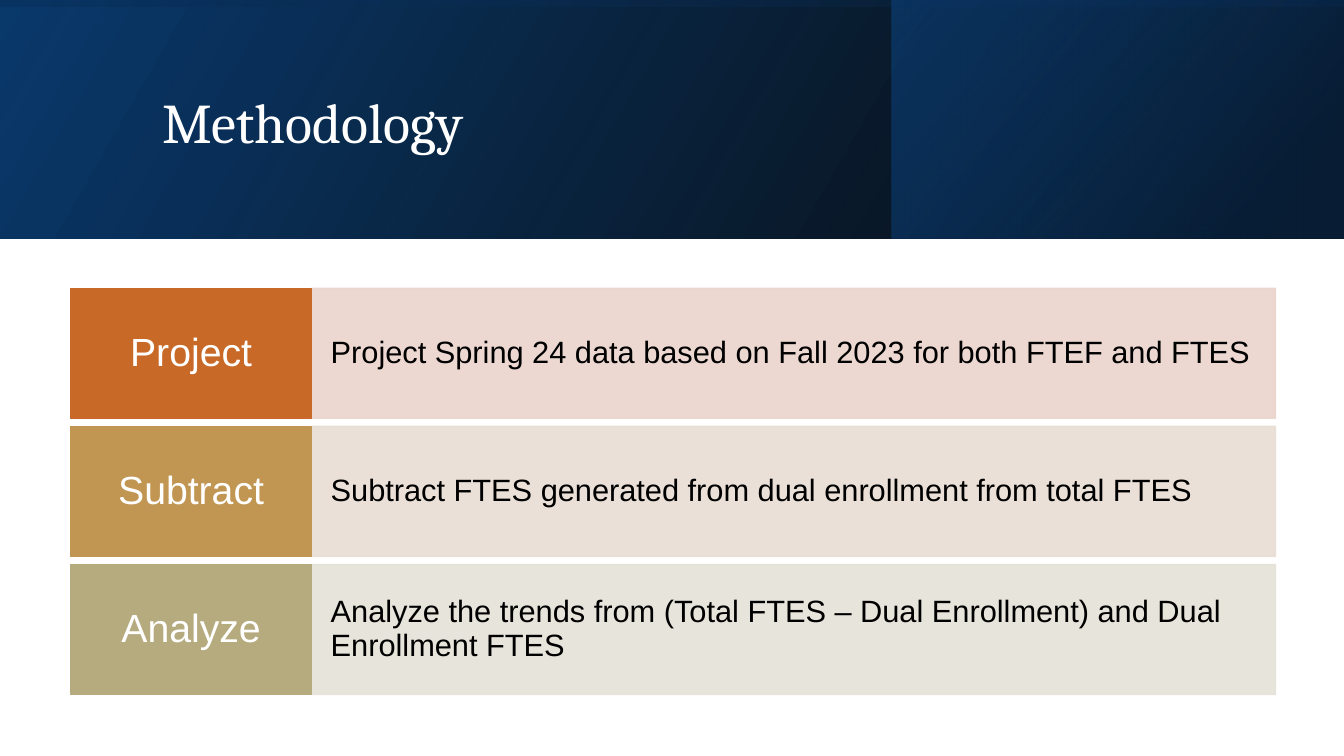
from lxml import etree
from pptx import Presentation
from pptx.dml.color import RGBColor
from pptx.enum.shapes import MSO_SHAPE
from pptx.enum.text import MSO_ANCHOR, PP_ALIGN
from pptx.oxml.ns import qn
from pptx.util import Inches, Pt

RECTANGLE = MSO_SHAPE.RECTANGLE
MIDDLE = MSO_ANCHOR.MIDDLE
LEFT, CENTER = PP_ALIGN.LEFT, PP_ALIGN.CENTER

WIDTH, HEIGHT = 13.33, 7.5
BANNER_HEIGHT = 2.37
PANEL_LEFT = 8.84
LABEL_LEFT, LABEL_WIDTH = 0.7, 2.39
DETAIL_LEFT, DETAIL_WIDTH = LABEL_LEFT + LABEL_WIDTH, 9.56
ROW_TOP, ROW_HEIGHT, ROW_PITCH = 2.86, 1.29, 1.37

STEPS = [
    ("Project", "C96928", "EBD4CD",
     "Project Spring 24 data based on Fall 2023 for both FTEF and FTES"),
    ("Subtract", "C19552", "E8DDD3",
     "Subtract FTES generated from dual enrollment from total FTES"),
    ("Analyze", "B6AB7F", "E5E2D8",
     "Analyze the trends from (Total FTES – Dual Enrollment) and Dual Enrollment FTES"),
]


def rgb(value):
    return RGBColor.from_string(value)


def set_opacity(element, percent):
    """Give every RGB colour inside the element the same opacity."""
    for color in element.iter(qn("a:srgbClr")):
        etree.SubElement(color, qn("a:alpha")).set("val", str(percent * 1000))


def add_rectangle(slide, left, top, width, height):
    shape = slide.shapes.add_shape(
        RECTANGLE, Inches(left), Inches(top), Inches(width), Inches(height))
    shape.shadow.inherit = False
    return shape


def add_gradient_layer(slide, box, stops, angle, rotation=0):
    """Add a mirrored gradient; each stop is position, colour, opacity percent."""
    shape = add_rectangle(slide, *box)
    shape.rotation = rotation
    shape.element.spPr.find(qn("a:xfrm")).set("flipH", "1")
    shape.line.fill.background()
    shape.fill.gradient()
    shape.fill.gradient_angle = angle
    elements = shape.element.spPr.iter(qn("a:gs"))
    for stop, element, (position, color, opacity) in zip(
            shape.fill.gradient_stops, elements, stops):
        stop.position = position
        stop.color.rgb = rgb(color)
        set_opacity(element, opacity)


def write_text(shape, text, font_name, size, color, alignment, margin=0.1):
    frame = shape.text_frame
    frame.word_wrap = True
    frame.vertical_anchor = MIDDLE
    frame.margin_left = frame.margin_right = Inches(margin)
    paragraph = frame.paragraphs[0]
    paragraph.text = text
    paragraph.alignment = alignment
    paragraph.line_spacing = 0.9
    paragraph.font.name = font_name
    paragraph.font.size = Pt(size)
    paragraph.font.color.rgb = rgb(color)


def add_block(slide, left, top, width, color, opacity=100):
    shape = add_rectangle(slide, left, top, width, ROW_HEIGHT)
    shape.fill.solid()
    shape.fill.fore_color.rgb = rgb(color)
    shape.line.color.rgb = rgb(color)
    shape.line.width = Pt(1)
    if opacity < 100:
        set_opacity(shape.element.spPr, opacity)
    return shape


def add_banner(slide):
    add_gradient_layer(slide, (0, 0, WIDTH, BANNER_HEIGHT),
                       [(0, "000000", 96), (1, "0A396C", 100)], 30)
    add_gradient_layer(slide, (PANEL_LEFT, 0, WIDTH - PANEL_LEFT, BANNER_HEIGHT),
                       [(0.19, "072648", 68), (1, "0D4C90", 48)], 40)
    # A quarter turn lays this tall rectangle across the banner.
    offset = (WIDTH - BANNER_HEIGHT) / 2
    add_gradient_layer(slide, (offset, -offset, BANNER_HEIGHT, WIDTH),
                       [(0.23, "0A396C", 16), (0.99, "000000", 45)], 10, 270)
    title = slide.shapes.add_textbox(
        Inches(1.51), Inches(0.38), Inches(10.63), Inches(1.72))
    write_text(title, "Methodology", "Cambria", 40, "FFFFFF", LEFT)


def add_step(slide, row, name, label_color, detail_color, detail):
    top = ROW_TOP + row * ROW_PITCH
    detail_block = add_block(
        slide, DETAIL_LEFT, top, DETAIL_WIDTH, detail_color, 90)
    write_text(detail_block, detail, "Arial", 22, "000000", LEFT, 0.19)
    label_block = add_block(slide, LABEL_LEFT, top, LABEL_WIDTH, label_color)
    write_text(label_block, name, "Arial", 28, "FFFFFF", CENTER, 0.13)


def main():
    presentation = Presentation()
    presentation.slide_width = Inches(WIDTH)
    presentation.slide_height = Inches(HEIGHT)
    slide = presentation.slides.add_slide(presentation.slide_layouts[6])
    add_banner(slide)
    for row, step in enumerate(STEPS):
        add_step(slide, row, *step)
    presentation.save("out.pptx")


if __name__ == "__main__":
    main()
